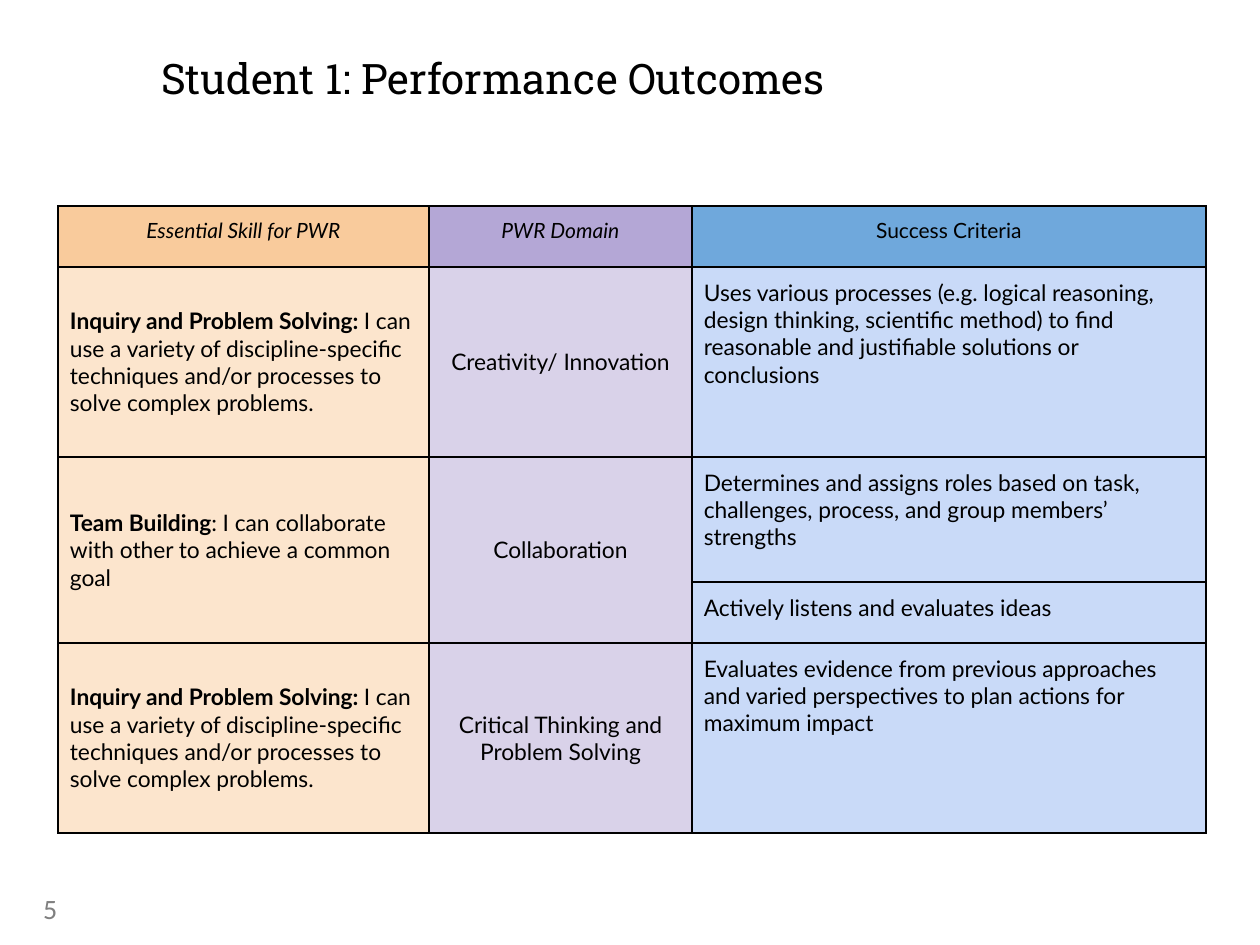
from dataclasses import dataclass

from lxml import etree
from pptx import Presentation
from pptx import util as u
from pptx.dml import color
from pptx.enum import text
from pptx.oxml import ns

EMU_PER_PX = 914400 / 126


def px(length: int) -> u.Emu:
    return u.Emu(round(length * EMU_PER_PX))


@dataclass(frozen=True)
class Theme:
    ink: str = "000000"
    muted: str = "808080"
    header_fills: tuple = ("F9CB9C", "B4A7D6", "6FA8DC")
    body_fills: tuple = ("FCE5CD", "D9D2E9", "C9DAF8")
    title_font: str = "Roboto Slab"
    table_font: str = "Lato"
    number_font: str = "Calibri"
    title_size: int = 24
    header_size: int = 12
    body_size: int = 13
    number_size: int = 16
    border_pt: int = 1


@dataclass(frozen=True)
class Label:
    words: str
    left: int
    top: int
    width: int
    height: int
    font: str
    size: int
    ink: str
    inset: tuple = (13, 6)
    spacing: float = 1.0


@dataclass(frozen=True)
class Outcome:
    skill: str
    statement: str
    domain: str
    criteria: tuple


THEME = Theme()
LABELS = (
    Label("Student 1: Performance Outcomes", 161, 58, 711, 82,
          THEME.title_font, THEME.title_size, THEME.ink, (0, 0), 0.9),
    Label("5", 30, 886, 284, 50,
          THEME.number_font, THEME.number_size, THEME.muted),
)

TABLE_LEFT, TABLE_TOP = 58, 206
COLUMN_WIDTHS = (371, 263, 514)
ROW_HEIGHTS = (61, 190, 125, 61, 190)
CELL_INSET = 12
HEADERS = ("Essential Skill for PWR", "PWR Domain", "Success Criteria")
INQUIRY = ("Inquiry and Problem Solving: ",
           "I can use a variety of discipline-specific techniques "
           "and/or processes to solve complex problems.")
OUTCOMES = (
    Outcome(*INQUIRY, "Creativity/ Innovation",
            ("Uses various processes (e.g. logical reasoning, design thinking, scientific "
             "method) to find reasonable and justifiable solutions or conclusions",)),
    Outcome("Team Building", ": I can collaborate with other to achieve a common goal",
            "Collaboration",
            ("Determines and assigns roles based on task, challenges, process, "
             "and group members’ strengths",
             "Actively listens and evaluates ideas")),
    Outcome(*INQUIRY, "Critical Thinking and Problem Solving",
            ("Evaluates evidence from previous approaches and varied perspectives "
             "to plan actions for maximum impact",)),
)


def set_font(paragraph, name: str, size: int, ink: str) -> None:
    paragraph.font.name = name
    paragraph.font.size = u.Pt(size)
    paragraph.font.color.rgb = color.RGBColor.from_string(ink)


def draw_label(slide, label: Label) -> None:
    box = slide.shapes.add_textbox(
        px(label.left), px(label.top), px(label.width), px(label.height))
    frame = box.text_frame
    frame.word_wrap = True
    frame.margin_left = frame.margin_right = px(label.inset[0])
    frame.margin_top = frame.margin_bottom = px(label.inset[1])
    line = frame.paragraphs[0]
    line.text = label.words
    line.line_spacing = label.spacing
    set_font(line, label.font, label.size, label.ink)


def style_cell(cell, fill: str) -> None:
    """Outline the cell, then fill it and set its insets."""
    properties = cell._tc.get_or_add_tcPr()
    for side in ("lnL", "lnR", "lnT", "lnB"):
        border = etree.SubElement(properties, ns.qn(f"a:{side}"),
                                  w=str(u.Pt(THEME.border_pt)))
        solid = etree.SubElement(border, ns.qn("a:solidFill"))
        etree.SubElement(solid, ns.qn("a:srgbClr"), val=THEME.ink)
    cell.fill.solid()
    cell.fill.fore_color.rgb = color.RGBColor.from_string(fill)
    cell.margin_left = cell.margin_right = px(CELL_INSET)
    cell.margin_top = cell.margin_bottom = px(CELL_INSET)


def write_cell(cell, words: str, size: int = THEME.body_size, lead: str = "",
               centred: bool = False, middle: bool = False):
    """Write the words after an optional bold lead."""
    paragraph = cell.text_frame.paragraphs[0]
    if lead:
        opening = paragraph.add_run()
        opening.text = lead
        opening.font.bold = True
    paragraph.add_run().text = words
    set_font(paragraph, THEME.table_font, size, THEME.ink)
    if centred:
        paragraph.alignment = text.PP_ALIGN.CENTER
    if middle:
        cell.vertical_anchor = text.MSO_ANCHOR.MIDDLE
    return paragraph


def draw_outcomes(slide) -> None:
    table = slide.shapes.add_table(
        len(ROW_HEIGHTS), len(COLUMN_WIDTHS), px(TABLE_LEFT), px(TABLE_TOP),
        px(sum(COLUMN_WIDTHS)), px(sum(ROW_HEIGHTS))).table
    table.first_row = table.horz_banding = False
    for column, width in zip(table.columns, COLUMN_WIDTHS):
        column.width = px(width)
    for index, (row, height) in enumerate(zip(table.rows, ROW_HEIGHTS)):
        row.height = px(height)
        fills = THEME.body_fills if index else THEME.header_fills
        for cell, fill in zip(row.cells, fills):
            style_cell(cell, fill)

    # Header row: the two framework columns are italic
    for index, heading in enumerate(HEADERS):
        paragraph = write_cell(table.cell(0, index), heading,
                               THEME.header_size, centred=True)
        paragraph.font.italic = index < 2

    # Each outcome spans one row per success criterion
    top = 1
    for outcome in OUTCOMES:
        last = top + len(outcome.criteria) - 1
        skill, domain = table.cell(top, 0), table.cell(top, 1)
        if last > top:
            skill.merge(table.cell(last, 0))
            domain.merge(table.cell(last, 1))
        write_cell(skill, outcome.statement, lead=outcome.skill, middle=True)
        write_cell(domain, outcome.domain, centred=True, middle=True)
        for row, criterion in enumerate(outcome.criteria, top):
            write_cell(table.cell(row, 2), criterion)
        top = last + 1


def main() -> None:
    deck = Presentation()
    deck.slide_width, deck.slide_height = px(1260), px(945)
    slide = deck.slides.add_slide(deck.slide_layouts[6])

    # Title and page number
    for label in LABELS:
        draw_label(slide, label)

    # Outcomes table
    draw_outcomes(slide)
    deck.save("out.pptx")


if __name__ == "__main__":
    main()
